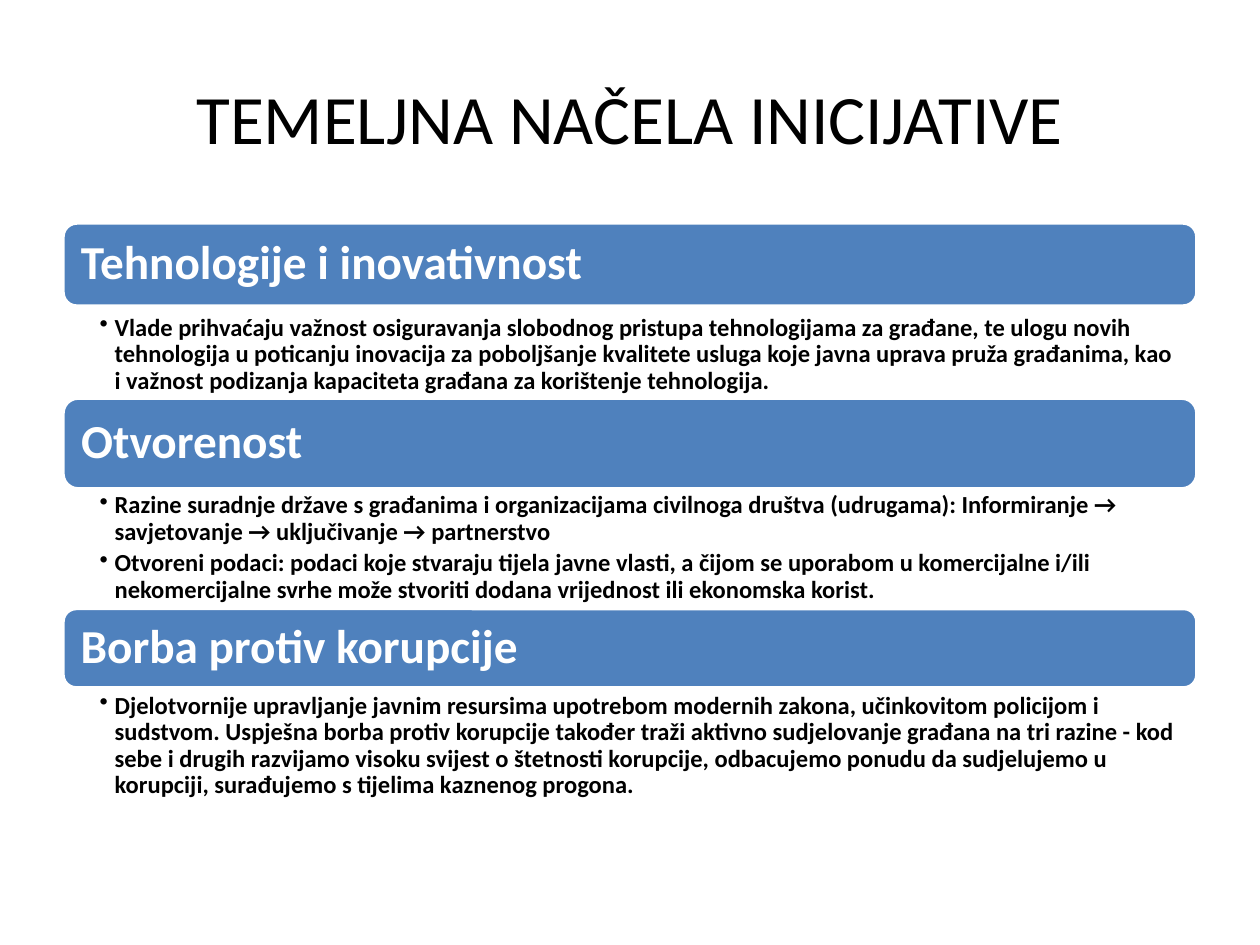
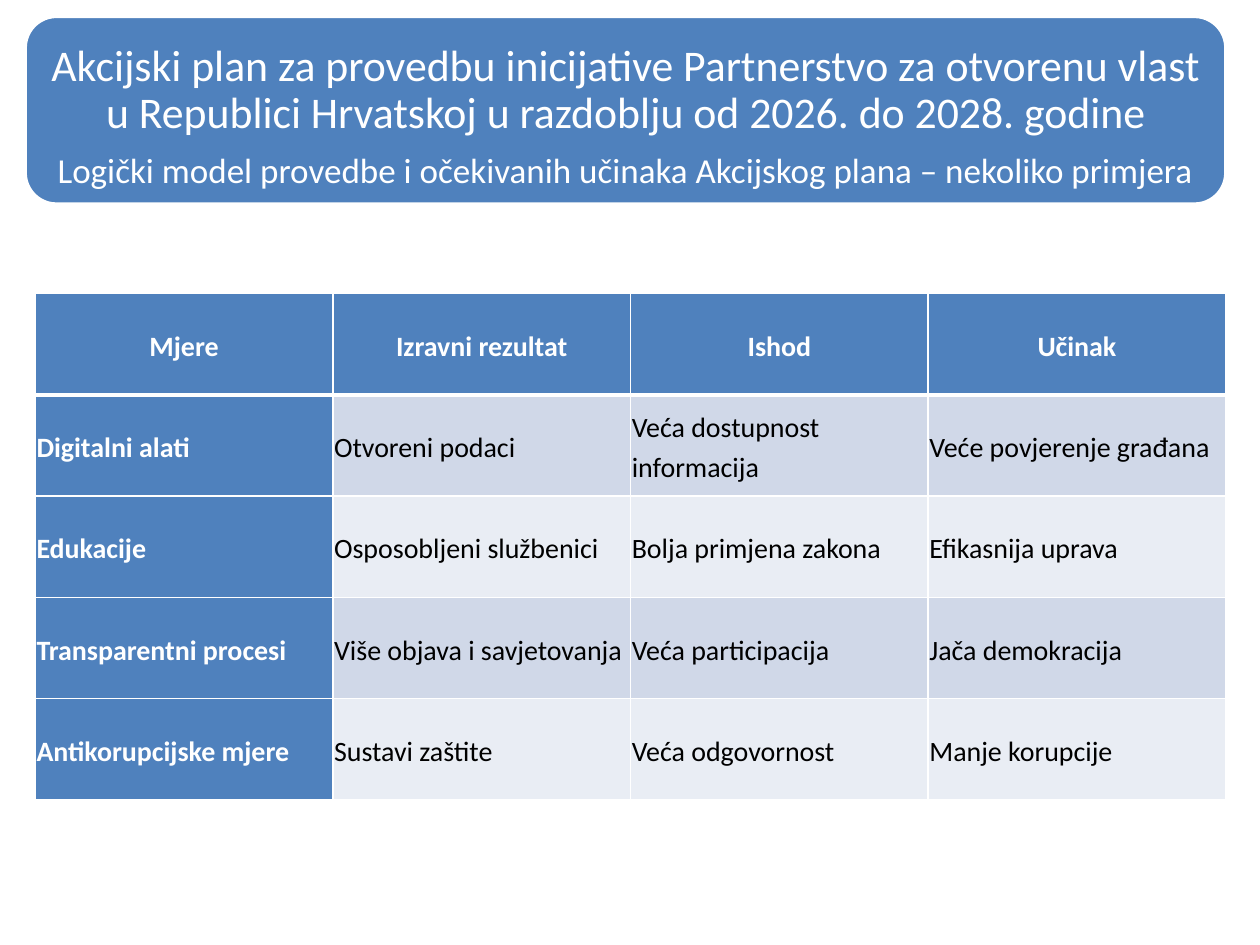
"""Two slides on the open government initiative: its principles and its action plan."""
from lxml import etree
from pptx import Presentation
from pptx import util as u
from pptx.dml.color import RGBColor
from pptx.enum import shapes, text
from pptx.oxml.ns import qn

FONT = "Calibri"
COLORS = {"blue": "4F81BD", "white": "FFFFFF", "black": "000000",
          "odd": "D0D8E8", "even": "E9EDF4"}

TITLE = "TEMELJNA NAČELA INICIJATIVE"
# heading, band height, gap below band, body height, points
PRINCIPLES = [
    ("Tehnologije i inovativnost", 0.66, 0.04, 0.69, [
        "Vlade prihvaćaju važnost osiguravanja slobodnog pristupa tehnologijama za građane, "
        "te ulogu novih tehnologija u poticanju inovacija za poboljšanje kvalitete usluga koje "
        "javna uprava pruža građanima, kao i važnost podizanja kapaciteta građana za "
        "korištenje tehnologija."]),
    ("Otvorenost", 0.72, 0, 0.95, [
        "Razine suradnje države s građanima i organizacijama civilnoga društva (udrugama): "
        "Informiranje → savjetovanje → uključivanje → partnerstvo",
        "Otvoreni podaci: podaci koje stvaraju tijela javne vlasti, a čijom se uporabom u "
        "komercijalne i/ili nekomercijalne svrhe može stvoriti dodana vrijednost ili "
        "ekonomska korist."]),
    ("Borba protiv korupcije", 0.63, 0.01, 1.18, [
        "Djelotvornije upravljanje javnim resursima upotrebom modernih zakona, učinkovitom "
        "policijom i sudstvom. Uspješna borba protiv korupcije također traži aktivno "
        "sudjelovanje građana na tri razine - kod sebe i drugih razvijamo visoku svijest o "
        "štetnosti korupcije, odbacujemo ponudu da sudjelujemo u korupciji, surađujemo s "
        "tijelima kaznenog progona."]),
]
PLAN = ("Akcijski plan za provedbu inicijative Partnerstvo za otvorenu vlast u Republici "
        "Hrvatskoj u razdoblju od 2026. do 2028. godine")
MODEL = "Logički model provedbe i očekivanih učinaka Akcijskog plana – nekoliko primjera"
MEASURES = [
    ("Mjere", "Izravni rezultat", "Ishod", "Učinak"),
    ("Digitalni alati", "Otvoreni podaci", "Veća dostupnost informacija",
     "Veće povjerenje građana"),
    ("Edukacije", "Osposobljeni službenici", "Bolja primjena zakona", "Efikasnija uprava"),
    ("Transparentni procesi", "Više objava i savjetovanja", "Veća participacija",
     "Jača demokracija"),
    ("Antikorupcijske mjere", "Sustavi zaštite", "Veća odgovornost", "Manje korupcije"),
]
LEFT, WIDTH, FIRST_BAND = 0.5, 9, 1.77
CENTER, START = text.PP_ALIGN.CENTER, text.PP_ALIGN.LEFT
MIDDLE, TOP = text.MSO_ANCHOR.MIDDLE, text.MSO_ANCHOR.TOP


def rgb(name):
    return RGBColor.from_string(COLORS[name])


def set_margins(target, left, top, right, bottom):
    target.margin_left, target.margin_top = u.Inches(left), u.Inches(top)
    target.margin_right, target.margin_bottom = u.Inches(right), u.Inches(bottom)


def add_bullet(p):
    pPr = p._p.get_or_add_pPr()
    pPr.set("marL", str(u.Inches(0.12)))
    pPr.set("indent", str(-u.Inches(0.12)))
    etree.SubElement(pPr, qn("a:buChar"), char="•")


def write(tf, lines, color, bold=False, align=START, spacing=0.9, after=0, bullet=False):
    for i, (words, size) in enumerate(lines):
        p = tf.paragraphs[0] if i == 0 else tf.add_paragraph()
        if bullet:
            add_bullet(p)
        p.alignment, p.line_spacing = align, spacing
        if i < len(lines) - 1:
            p.space_after = u.Pt(after)
        r = p.add_run()
        r.text = words
        r.font.name, r.font.size, r.font.bold = FONT, u.Pt(size), bold
        r.font.color.rgb = rgb(color)


def frame(sp, margins, anchor):
    tf = sp.text_frame
    tf.word_wrap, tf.vertical_anchor = True, anchor
    set_margins(tf, *margins)
    return tf


def add_band(slide, box, margins):
    sp = slide.shapes.add_shape(shapes.MSO_SHAPE.ROUNDED_RECTANGLE, *map(u.Inches, box))
    sp.shadow.inherit = False
    sp.fill.solid()
    sp.fill.fore_color.rgb = rgb("blue")
    sp.line.color.rgb, sp.line.width = rgb("white"), u.Pt(2)
    return frame(sp, margins, MIDDLE)


def add_text(slide, box, margins, anchor):
    return frame(slide.shapes.add_textbox(*map(u.Inches, box)), margins, anchor)


def set_borders(cell, bottom):
    tcPr = cell._tc.get_or_add_tcPr()
    for i, (side, width) in enumerate(zip("LRTB", (1, 1, 1, bottom))):
        ln = etree.Element(qn(f"a:ln{side}"), w=str(u.Pt(width)))
        fill = etree.SubElement(ln, qn("a:solidFill"))
        etree.SubElement(fill, qn("a:srgbClr"), val=COLORS["white"])
        tcPr.insert(i, ln)


def build_principles(slide):
    tf = add_text(slide, (LEFT, 0.3, WIDTH, 1.25), (0.1, 0.05, 0.1, 0.05), MIDDLE)
    write(tf, [(TITLE, 39.6)], "black", align=CENTER, spacing=1)
    y = FIRST_BAND
    for heading, band_h, gap, body_h, points in PRINCIPLES:
        tf = add_band(slide, (LEFT, y, WIDTH, band_h), (0.11, 0.05, 0.11, 0.05))
        write(tf, [(heading, 27)], "white", bold=True)
        y += band_h + gap
        tf = add_text(slide, (LEFT, y, WIDTH, body_h), (0.29, 0.03, 0.14, 0.03), TOP)
        write(tf, [(point, 14) for point in points], "black", bold=True, after=2.8,
              bullet=True)
        y += body_h


def build_plan(slide):
    tf = add_band(slide, (0.2, 0.13, 9.53, 1.49), (0.1, 0.12, 0.1, 0.01))
    write(tf, [(PLAN, 25), (MODEL, 20)], "white", align=CENTER, after=8.75)
    rows, cols = len(MEASURES), len(MEASURES[0])
    box = map(u.Inches, (0.28, 2.33, 9.45, 4.02))
    table = slide.shapes.add_table(rows, cols, *box).table
    for i, row in enumerate(MEASURES):
        for j, words in enumerate(row):
            cell = table.cell(i, j)
            head = i == 0 or j == 0
            cell.fill.solid()
            cell.fill.fore_color.rgb = rgb("blue" if head else "odd" if i % 2 else "even")
            cell.vertical_anchor = MIDDLE
            set_margins(cell, 0.01, 0.01, 0.01, 0.01)
            set_borders(cell, 3 if i == 0 else 1)
            write(cell.text_frame, [(words, 16)], "white" if head else "black", bold=head,
                  align=START if i else CENTER, spacing=1.15)


def main():
    prs = Presentation()
    prs.slide_width, prs.slide_height = u.Inches(10), u.Inches(7.5)
    for build in (build_principles, build_plan):
        build(prs.slides.add_slide(prs.slide_layouts[6]))
    prs.save("out.pptx")


if __name__ == "__main__":
    main()
